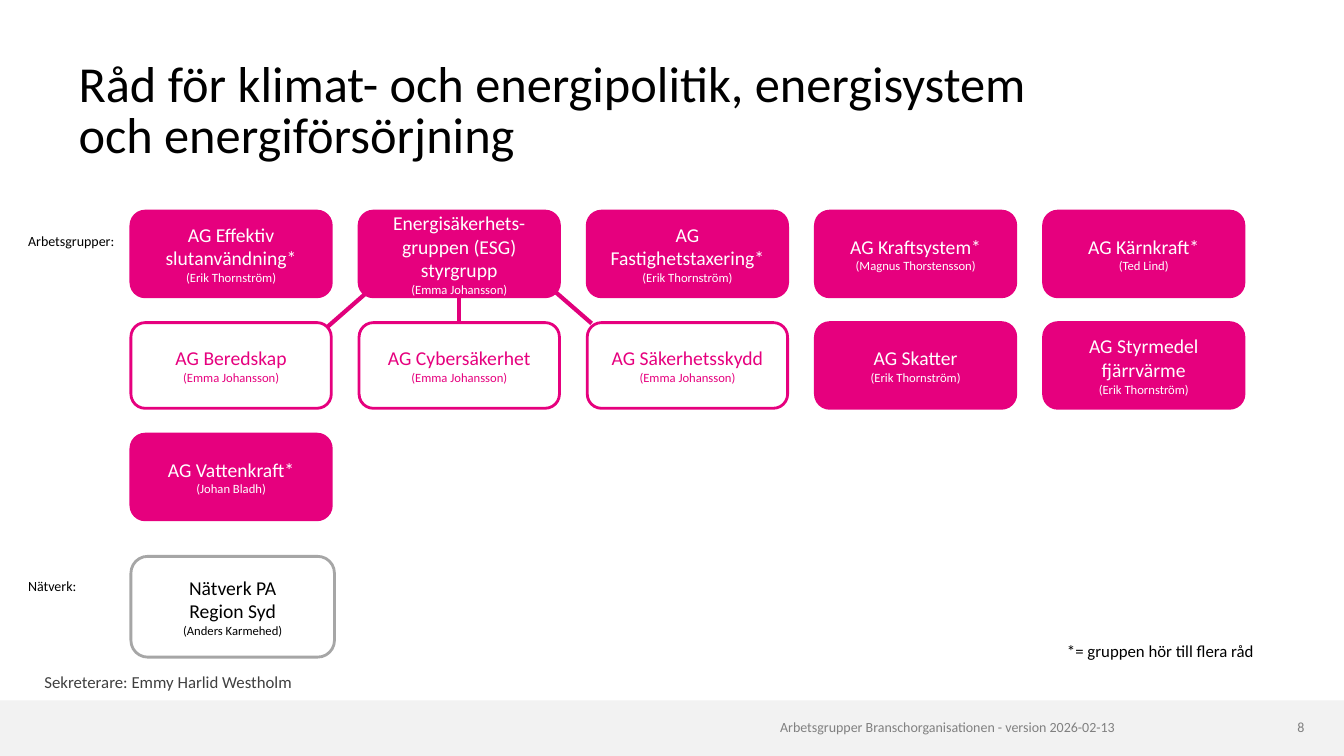
"""Build the slide with working groups under the energy policy council."""
from dataclasses import dataclass

from lxml.etree import SubElement
from pptx import Presentation
from pptx.dml.color import RGBColor
from pptx.enum.shapes import MSO_CONNECTOR, MSO_SHAPE
from pptx.enum.text import MSO_ANCHOR, PP_ALIGN
from pptx.oxml.ns import qn
from pptx.util import Cm, Pt


@dataclass(frozen=True)
class Theme:
    """Colours, type sizes and line widths of the slide."""

    font: str = "Calibri"
    magenta: str = "E6007E"
    branch: str = "E1007B"
    white: str = "FFFFFF"
    black: str = "000000"
    grey: str = "A6A6A6"
    band: str = "F2F2F2"
    footer: str = "808080"
    secretary: str = "404040"
    title_size: int = 36
    group_size: int = 14
    note_size: int = 12
    label_size: int = 10
    person_size: int = 9
    border: int = 2
    branch_width: int = 3


THEME = Theme()
FILLED = (THEME.magenta, THEME.magenta, THEME.white)
OUTLINED = (THEME.white, THEME.magenta, THEME.magenta)
NETWORK = (THEME.white, THEME.grey, THEME.black)

GRID_LEFT, GRID_TOP = 3.3, 5.32
COLUMN_STEP, ROW_STEP = 5.75, 2.81
CARD_WIDTH, CARD_HEIGHT = 5.05, 2.16

GROUP_ROWS = [
    [
        (["AG Effektiv slutanvändning*", "(Erik Thornström)"], FILLED),
        (["Energisäkerhets-gruppen (ESG) styrgrupp", "(Emma Johansson)"], FILLED),
        (["AG Fastighetstaxering*", "(Erik Thornström)"], FILLED),
        (["AG Kraftsystem*", "(Magnus Thorstensson)"], FILLED),
        (["AG Kärnkraft*", "(Ted Lind)"], FILLED),
    ],
    [
        (["AG Beredskap", "(Emma Johansson)"], OUTLINED),
        (["AG Cybersäkerhet", "(Emma Johansson)"], OUTLINED),
        (["AG Säkerhetsskydd", "(Emma Johansson)"], OUTLINED),
        (["AG Skatter", "(Erik Thornström)"], FILLED),
        (["AG Styrmedel fjärrvärme", "(Erik Thornström)"], FILLED),
    ],
    [(["AG Vattenkraft*", "(Johan Bladh)"], FILLED)],
]

BRANCHES = [
    (9.37, 7.26, 8.26, 8.23),
    (11.56, 7.21, 11.56, 8.15),
    (13.77, 7.16, 14.91, 8.15),
]


def apply_format(target, values):
    """Set each named attribute of the target."""
    for attribute, value in values.items():
        setattr(target, attribute, value)


def write_paragraph(paragraph, wording, size, colour, **layout):
    """Write one run of text with its font and paragraph layout."""
    apply_format(paragraph, layout)
    run = paragraph.add_run()
    run.text = wording
    apply_format(run.font, {"name": THEME.font, "size": Pt(size)})
    run.font.color.rgb = RGBColor.from_string(colour)


def add_caption(slide, box, wording, size, colour, frame=None, **layout):
    """Add a text box that holds one paragraph."""
    caption = slide.shapes.add_textbox(*map(Cm, box)).text_frame
    apply_format(caption, {"word_wrap": True, **(frame or {})})
    write_paragraph(caption.paragraphs[0], wording, size, colour, **layout)


def add_panel(slide, preset, box, fill):
    """Add a filled preset shape without shadow."""
    panel = slide.shapes.add_shape(preset, *map(Cm, box))
    panel.shadow.inherit = False
    panel.fill.solid()
    panel.fill.fore_color.rgb = RGBColor.from_string(fill)
    return panel


def add_card(slide, box, wordings, look):
    """Add a rounded card whose last line names the contact person."""
    fill, border, ink = look
    card = add_panel(slide, MSO_SHAPE.ROUNDED_RECTANGLE, box, fill)
    card.line.color.rgb = RGBColor.from_string(border)
    card.line.width = Pt(THEME.border)
    frame = card.text_frame
    apply_format(frame, {"word_wrap": True, "vertical_anchor": MSO_ANCHOR.MIDDLE})
    last = len(wordings) - 1
    for index, wording in enumerate(wordings):
        paragraph = frame.add_paragraph() if index else frame.paragraphs[0]
        size = THEME.person_size if index == last else THEME.group_size
        write_paragraph(paragraph, wording, size, ink, alignment=PP_ALIGN.CENTER)


def add_branch(slide, ends):
    """Add a straight line from the steering group to a subgroup."""
    branch = slide.shapes.add_connector(MSO_CONNECTOR.STRAIGHT, *map(Cm, ends))
    branch.line.color.rgb = RGBColor.from_string(THEME.branch)
    branch.line.width = Pt(THEME.branch_width)
    SubElement(branch._element.spPr, qn("a:effectLst"))


def add_group_grid(slide):
    """Place the working groups in rows and columns."""
    for row, groups in enumerate(GROUP_ROWS):
        for column, (wordings, look) in enumerate(groups):
            left = GRID_LEFT + column * COLUMN_STEP
            top = GRID_TOP + row * ROW_STEP
            add_card(slide, (left, top, CARD_WIDTH, CARD_HEIGHT), wordings, look)


def add_captions(slide):
    """Add the title, row labels, notes and footer."""
    flush = dict.fromkeys(
        ("margin_left", "margin_right", "margin_top", "margin_bottom"), 0
    )
    add_caption(
        slide, (1.98, 1.42, 24.1, 2.72),
        "Råd för klimat- och energipolitik, energisystem och energiförsörjning",
        THEME.title_size, THEME.black,
        {**flush, "vertical_anchor": MSO_ANCHOR.BOTTOM}, line_spacing=0.85,
    )
    add_caption(
        slide, (1.12, 16.92, 12.34, 0.58), "Sekreterare: Emmy Harlid Westholm",
        THEME.note_size, THEME.secretary,
        {**flush, "vertical_anchor": MSO_ANCHOR.MIDDLE}, line_spacing=0.97,
    )
    for top, label in ((5.77, "Arbetsgrupper:"), (14.48, "Nätverk:")):
        add_caption(
            slide, (0.46, top, 3.07, 0.6), label,
            THEME.label_size, THEME.black, line_spacing=0.9,
        )
    add_caption(
        slide, (26.64, 16.08, 5.26, 0.71), "*= gruppen hör till flera råd",
        THEME.note_size, THEME.black, {"word_wrap": False}, line_spacing=0.9,
    )
    for left, width, wording in (
        (5.59, 22.5, "Arbetsgrupper Branschorganisationen - version 2026-02-13"),
        (31.88, 0.99, "8"),
    ):
        add_caption(
            slide, (left, 18.11, width, 0.5), wording,
            THEME.label_size, THEME.footer, flush, alignment=PP_ALIGN.RIGHT,
        )


def main():
    """Build and save the presentation."""
    presentation = Presentation()
    apply_format(presentation, {"slide_width": Cm(33.87), "slide_height": Cm(19.05)})
    slide = presentation.slides.add_slide(presentation.slide_layouts[6])
    band = add_panel(slide, MSO_SHAPE.RECTANGLE, (0, 17.65, 33.87, 1.4), THEME.band)
    band.line.fill.background()
    add_captions(slide)
    for ends in BRANCHES:
        add_branch(slide, ends)
    add_group_grid(slide)
    add_card(
        slide, (3.3, 14.02, 5.13, 2.54),
        ["Nätverk PA", "Region Syd", "(Anders Karmehed)"], NETWORK,
    )
    presentation.save("out.pptx")


if __name__ == "__main__":
    main()
